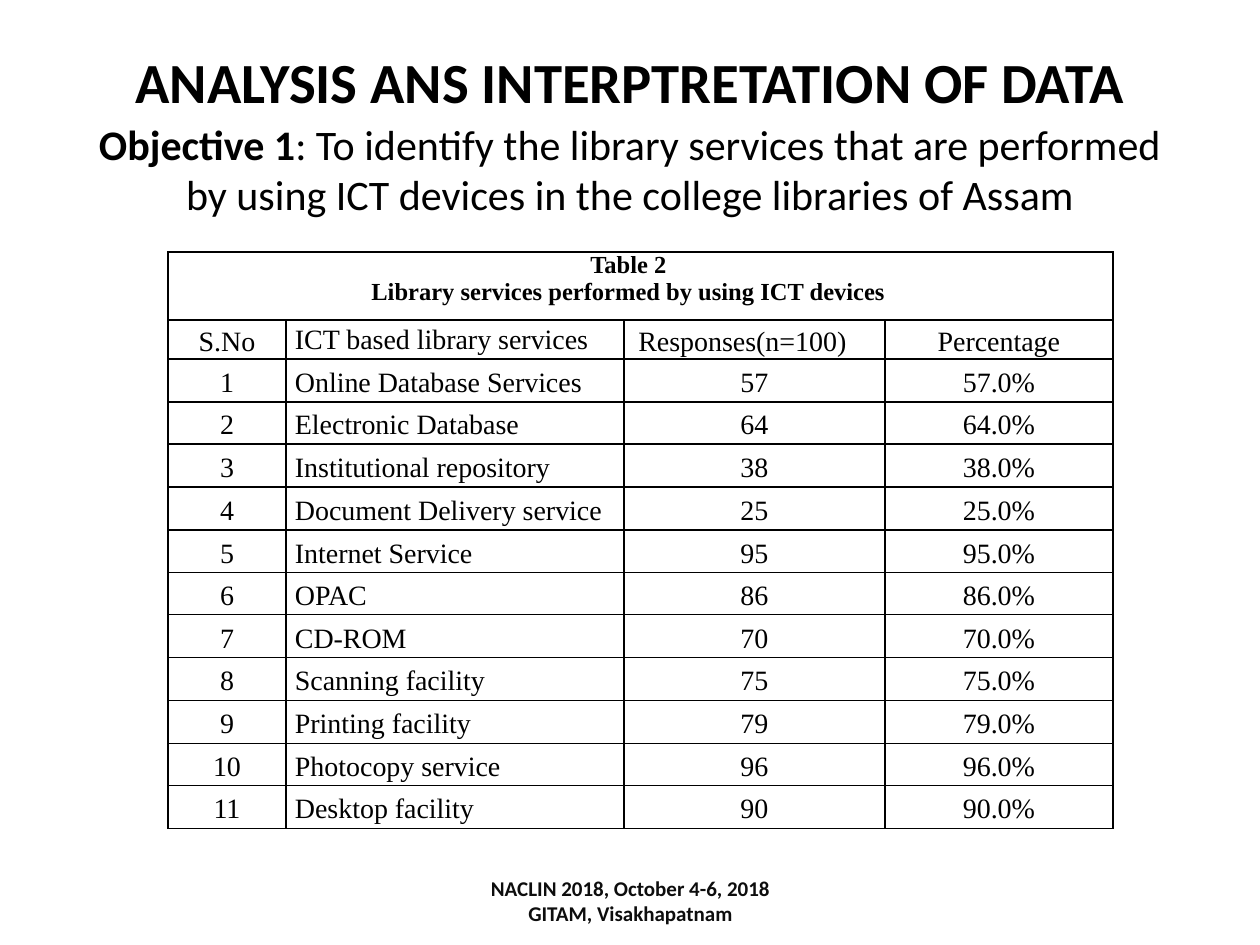
from lxml import etree
from pptx import Presentation
from pptx.dml.color import RGBColor
from pptx.enum.text import MSO_ANCHOR, MSO_AUTO_SIZE, PP_ALIGN
from pptx.oxml.ns import qn
from pptx.util import Emu, Pt

LEFT, CENTER, JUSTIFY = PP_ALIGN.LEFT, PP_ALIGN.CENTER, PP_ALIGN.JUSTIFY
TOP, MIDDLE = MSO_ANCHOR.TOP, MSO_ANCHOR.MIDDLE
NO_AUTOFIT = MSO_AUTO_SIZE.NONE
TITLE_ONLY = 5

PX_PER_INCH = 126
COLORS = {"ink": "000000", "footer": "0D0D0D"}
SANS, SERIF = "Calibri", "Times New Roman"

COLUMN_WIDTHS = [118, 338, 261, 228]
CAPTION_HEIGHT, HEADING_HEIGHT, SERVICES_HEIGHT = 68, 39, 470
CELL_INSET, CAPTION_SHIFT = 9, 24
CAPTION = ["Table 2", "Library services performed by using ICT devices"]
HEADINGS = ["S.No", "ICT based library services", "Responses(n=100)", "Percentage"]
SERVICES = [
    ("Online Database Services", 57),
    ("Electronic Database", 64),
    ("Institutional repository", 38),
    ("Document Delivery service", 25),
    ("Internet Service", 95),
    ("OPAC", 86),
    ("CD-ROM", 70),
    ("Scanning facility", 75),
    ("Printing facility", 79),
    ("Photocopy service", 96),
    ("Desktop facility", 90),
]


def px(length):
    """Turn pixels into EMU."""
    return Emu(round(length * 914400 / PX_PER_INCH))


def write(frame, lines, size, font=SANS, color="ink", bold=False, align=CENTER, spacing=None):
    """Fill a text frame; a line is a string or a list of (text, bold) runs."""
    for index, line in enumerate(lines):
        paragraph = frame.add_paragraph() if index else frame.paragraphs[0]
        paragraph.alignment = align
        if spacing:
            paragraph.line_spacing = spacing
        for text, is_bold in [(line, bold)] if isinstance(line, str) else line:
            run = paragraph.add_run()
            run.text = text
            run.font.size = Pt(size)
            run.font.name = font
            run.font.bold = is_bold
            run.font.color.rgb = RGBColor.from_string(COLORS[color])


def place_text(shape, box, lines, size, **style):
    """Position a text shape and write its middle-anchored lines."""
    shape.left, shape.top, shape.width, shape.height = map(px, box)
    frame = shape.text_frame
    frame.word_wrap = True
    frame.auto_size = NO_AUTOFIT
    frame.vertical_anchor = MIDDLE
    write(frame, lines, size, **style)


def add_text(slide, box, lines, size, **style):
    """Add a text box with its lines."""
    place_text(slide.shapes.add_textbox(0, 0, 0, 0), box, lines, size, **style)


def outline_cell(cell):
    """Clear the fill of a cell and draw its four borders."""
    properties = cell._tc.get_or_add_tcPr()
    for side in ("lnL", "lnR", "lnT", "lnB"):
        line = etree.SubElement(properties, qn(f"a:{side}"), w=str(Pt(1)))
        fill = etree.SubElement(line, qn("a:solidFill"))
        etree.SubElement(fill, qn("a:srgbClr"), val=COLORS["ink"])
    cell.fill.background()


def fill_cell(cell, lines, size=16, anchor=MIDDLE, shift=0, **style):
    """Write a table cell, with an extra right inset if shifted."""
    cell.margin_left, cell.margin_right = px(CELL_INSET), px(CELL_INSET + shift)
    cell.margin_top = cell.margin_bottom = 0
    cell.vertical_anchor = anchor
    write(cell.text_frame, lines, size, font=SERIF, **style)


def add_services_table(slide, left, top):
    """Add the table of services with caption, headings and shares."""
    count = len(SERVICES)
    edges = [round(SERVICES_HEIGHT * i / count) for i in range(count + 1)]
    heights = [CAPTION_HEIGHT, HEADING_HEIGHT]
    heights += [lower - upper for upper, lower in zip(edges, edges[1:])]
    table = slide.shapes.add_table(
        len(heights), len(COLUMN_WIDTHS), px(left), px(top),
        px(sum(COLUMN_WIDTHS)), px(sum(heights))).table
    table.first_row = table.horz_banding = False
    for column, width in zip(table.columns, COLUMN_WIDTHS):
        column.width = px(width)
    for row, height in zip(table.rows, heights):
        row.height = px(height)
    for cell in table.iter_cells():
        outline_cell(cell)

    caption = table.cell(0, 0)
    caption.merge(table.cell(0, len(COLUMN_WIDTHS) - 1))
    fill_cell(caption, CAPTION, size=14, anchor=TOP, shift=CAPTION_SHIFT, bold=True)

    heading_styles = [{}, {"anchor": TOP, "align": JUSTIFY}, {"shift": CAPTION_SHIFT}, {}]
    for column, (heading, style) in enumerate(zip(HEADINGS, heading_styles)):
        fill_cell(table.cell(1, column), [heading], spacing=1.15, **style)

    for number, (service, responses) in enumerate(SERVICES, 1):
        values = [str(number), service, str(responses), f"{responses:.1f}%"]
        for column, value in enumerate(values):
            align = LEFT if column == 1 else CENTER
            fill_cell(table.cell(number + 1, column), [value], align=align, spacing=1.15)


def main():
    """Build the slide and save it."""
    deck = Presentation()
    deck.slide_width, deck.slide_height = px(1260), px(945)
    slide = deck.slides.add_slide(deck.slide_layouts[TITLE_ONLY])
    place_text(slide.shapes.title, (63, 42, 1134, 78),
               ["ANALYSIS ANS INTERPTRETATION OF DATA"], 32.4, bold=True)
    add_services_table(slide, 168, 252)
    objective = [
        ("Objective 1", True),
        (": To identify the library services that are performed by using "
         "ICT devices in the college libraries of Assam", False),
    ]
    add_text(slide, (63, 116, 1134, 105), [objective], 24)
    add_text(slide, (431, 876, 399, 50),
             ["NACLIN 2018, October 4-6, 2018", "GITAM, Visakhapatnam"],
             12, color="footer", bold=True)
    deck.save("out.pptx")


if __name__ == "__main__":
    main()
